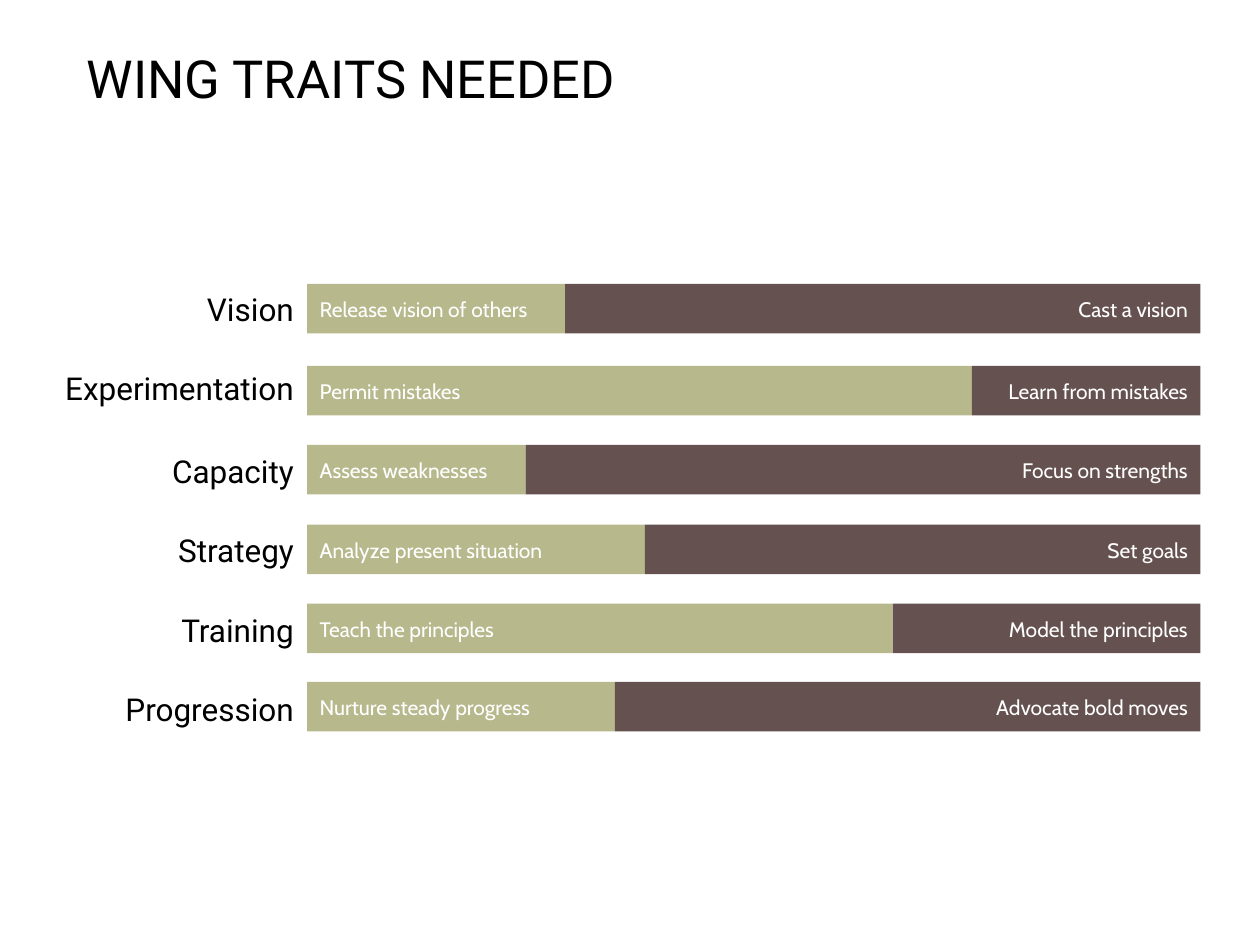
from pptx import Presentation
from pptx.dml.color import RGBColor
from pptx.enum import shapes, text
from pptx.util import Pt

COLORS = {"ink": "000000", "release": "B7B98D", "drive": "655250", "on_bar": "FFFFFF"}
INSET = 3.6
BAR_LEFT, BAR_RIGHT, BAR_HEIGHT = 175.5, 686, 28.3
LABEL_LEFT, LABEL_WIDTH, LABEL_HEIGHT = 14.5, 157, 30
CAPTION_HEIGHT = 21
LEFT_CAPTION_WIDTH, RIGHT_CAPTION_WIDTH = 180, 248

# trait, label top, bar top, where the bar splits, left caption, right caption
TRAITS = [
    ("Vision", 162.2, 162.3, 323, "Release vision of others", "Cast a vision"),
    ("Experimentation", 207.5, 209.1, 555.4, "Permit mistakes", "Learn from mistakes"),
    ("Capacity", 254.8, 254.3, 300.4, "Assess weaknesses", "Focus on strengths"),
    ("Strategy", 300.2, 299.8, 368.5, "Analyze present situation", "Set goals"),
    ("Training", 345.6, 345, 510, "Teach the principles", "Model the principles"),
    ("Progression", 391, 389.7, 351.4, "Nurture steady progress", "Advocate bold moves"),
]


def color(name):
    return RGBColor.from_string(COLORS[name])


def place(box):
    return [Pt(length) for length in box]


def write(frame, words, size, font, ink, align):
    frame.margin_left = frame.margin_right = Pt(INSET)
    frame.margin_top = frame.margin_bottom = Pt(INSET)
    frame.word_wrap = True
    frame.text = words
    paragraph = frame.paragraphs[0]
    paragraph.alignment = align
    paragraph.font.size = Pt(size)
    paragraph.font.name = font
    paragraph.font.color.rgb = color(ink)


def add_text(parent, box, words, size, font, ink, align):
    frame = parent.add_textbox(*place(box)).text_frame
    write(frame, words, size, font, ink, align)
    frame.auto_size = text.MSO_AUTO_SIZE.SHAPE_TO_FIT_TEXT


def add_segment(parent, box, fill):
    segment = parent.add_shape(shapes.MSO_SHAPE.RECTANGLE, *place(box))
    segment.shadow.inherit = False
    segment.fill.solid()
    segment.fill.fore_color.rgb = color(fill)
    segment.line.fill.background()


def add_title(slide, box):
    title = slide.shapes.title
    title.left, title.top, title.width, title.height = place(box)
    write(title.text_frame, "WING TRAITS NEEDED", 30, "Roboto", "ink", text.PP_ALIGN.LEFT)
    title.text_frame.vertical_anchor = text.MSO_ANCHOR.MIDDLE


def add_split_bar(slide, box, split, left_caption, right_caption):
    left, top, width, height = box
    right = left + width
    bar = slide.shapes.add_group_shape().shapes
    add_segment(bar, (left, top, split - left, height), "release")
    add_segment(bar, (split, top, right - split, height), "drive")

    # Captions sit inside the two ends of the bar
    caption_top = top + (height - CAPTION_HEIGHT) / 2
    right_caption_left = right - INSET - RIGHT_CAPTION_WIDTH
    add_text(bar, (left + INSET, caption_top, LEFT_CAPTION_WIDTH, CAPTION_HEIGHT),
             left_caption, 12, "Cabin", "on_bar", text.PP_ALIGN.LEFT)
    add_text(bar, (right_caption_left, caption_top, RIGHT_CAPTION_WIDTH, CAPTION_HEIGHT),
             right_caption, 12, "Cabin", "on_bar", text.PP_ALIGN.RIGHT)


def main():
    deck = Presentation()
    deck.slide_width, deck.slide_height = Pt(720), Pt(540)
    slide = deck.slides.add_slide(deck.slide_layouts[5])

    add_title(slide, (46, 1.5, 530, 85.5))

    # One label and one split bar per trait
    for trait, label_top, bar_top, split, left_caption, right_caption in TRAITS:
        add_text(slide.shapes, (LABEL_LEFT, label_top, LABEL_WIDTH, LABEL_HEIGHT),
                 trait, 18, "Roboto", "ink", text.PP_ALIGN.RIGHT)
        add_split_bar(slide, (BAR_LEFT, bar_top, BAR_RIGHT - BAR_LEFT, BAR_HEIGHT),
                      split, left_caption, right_caption)

    deck.save("out.pptx")


if __name__ == "__main__":
    main()
